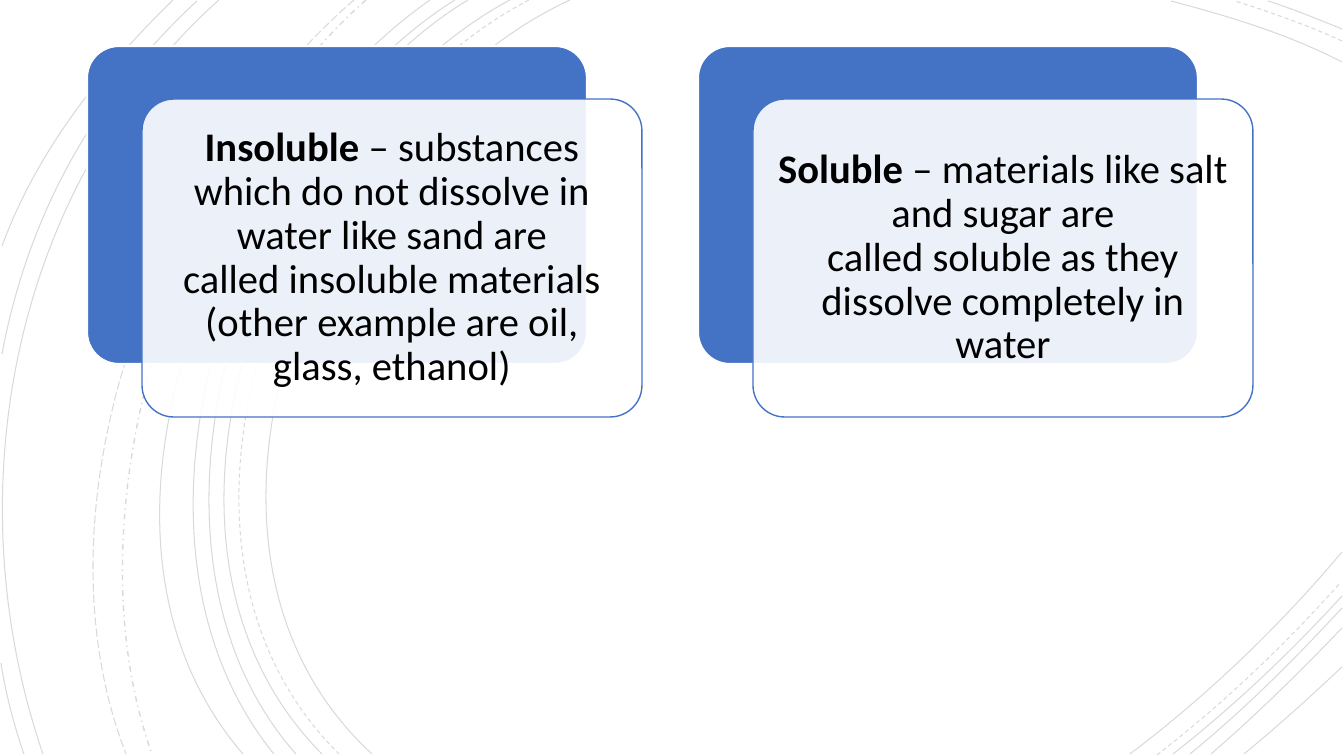
from lxml import etree
from pptx import Presentation
from pptx.dml.color import RGBColor
from pptx.enum.dml import MSO_LINE
from pptx.enum.shapes import MSO_SHAPE
from pptx.enum.text import MSO_ANCHOR, PP_ALIGN
from pptx.oxml.ns import qn
from pptx.util import Pt

SOLID, DASH = MSO_LINE.SOLID, MSO_LINE.DASH
DASH_DOT, LONG_DASH = MSO_LINE.DASH_DOT, MSO_LINE.LONG_DASH
ROUNDED = MSO_SHAPE.ROUNDED_RECTANGLE
MIDDLE, CENTER = MSO_ANCHOR.MIDDLE, PP_ALIGN.CENTER

BLACK = RGBColor(0x00, 0x00, 0x00)
WHITE = RGBColor(0xFF, 0xFF, 0xFF)
BLUE = RGBColor(0x44, 0x72, 0xC4)

NBSP = chr(160)

CARDS = [
    ("Insoluble", f" – substances which do not dissolve in water like sand are "
     f"called{NBSP}insoluble materials (other example are oil, glass, ethanol)"),
    ("Soluble ", f"– materials{NBSP}like salt and sugar are "
     f"called{NBSP}soluble{NBSP}as they dissolve completely in water"),
]

ARCS = [
    (SOLID, 0.75, [
        ((570, 0), (318, 116), (144, 544), (372, 754)),
        ((1342, 62), (1288, 34), (1228, 16), (1171, 1)),
        ((1130, 754), (1207, 696), (1279, 627), (1342, 552)),
        ((510, 0), (272, 128), (111, 541), (322, 754)),
        ((1342, 29), (1317, 19), (1293, 9), (1268, 1)),
        ((1173, 754), (1233, 707), (1290, 653), (1342, 596)),
        ((468, 0), (246, 134), (111, 545), (296, 754)),
        ((1190, 754), (1244, 710), (1294, 660), (1342, 608)),
        ((455, 0), (233, 139), (98, 537), (274, 754)),
        ((1211, 754), (1256, 715), (1300, 672), (1342, 628)),
        ((430, 0), (219, 148), (53, 533), (243, 754)),
        ((1244, 754), (1277, 727), (1309, 698), (1342, 667)),
        ((219, 0), (11, 186), (-46, 494), (43, 754)),
        ((197, 1), (93, 97), (28, 216), (2, 354)),
        ((1, 663), (6, 695), (14, 725), (24, 754)),
        ((173, 0), (101, 70), (37, 151), (2, 246)),
    ]),
    (DASH, 0.75, [
        ((529, 0), (287, 126), (124, 541), (339, 754)),
        ((1342, 41), (1307, 25), (1270, 12), (1235, 1)),
        ((1157, 755), (1223, 704), (1285, 645), (1341, 582)),
    ]),
    (DASH_DOT, 1, [((366, 0), (177, 167), (66, 513), (152, 754))]),
    (LONG_DASH, 0.75, [((354, 0), (158, 170), (29, 503), (126, 754))]),
]

SLIDE_W, SLIDE_H = 1344, 756
CARD_X, CARD_Y, CARD_W, CARD_H = 87, 46, 500, 318
CARD_PITCH = 611
FRONT_DX, FRONT_DY = 55, 53
TEXT_INSET = 12


def px(n):
    return round(n * 914400 / 100.8)


def set_alpha(element, percent):
    color = element.find(".//" + qn("a:srgbClr"))
    etree.SubElement(color, qn("a:alpha"), val=str(percent * 1000))


def add_arc(shapes, arc, dash, width):
    start, *rest = [(px(x), px(y)) for x, y in arc]
    builder = shapes.build_freeform(*start)
    builder.add_line_segments(rest, close=False)
    sp = builder.convert_to_shape()
    outline = sp._element.spPr.find(".//" + qn("a:path"))
    curve = etree.SubElement(outline, qn("a:cubicBezTo"))
    for segment in outline.findall(qn("a:lnTo")):
        curve.append(segment[0])
        outline.remove(segment)
    sp.shadow.inherit = False
    sp.fill.background()
    sp.line.color.rgb = BLACK
    sp.line.width = Pt(width)
    sp.line.dash_style = dash
    set_alpha(sp._element.spPr.find(qn("a:ln")), 15)


def add_panel(shapes, x, y, fill, line, width):
    sp = shapes.add_shape(ROUNDED, px(x), px(y), px(CARD_W), px(CARD_H))
    sp.adjustments[0] = 0.1
    sp.shadow.inherit = False
    sp.fill.solid()
    sp.fill.fore_color.rgb = fill
    sp.line.color.rgb = line
    sp.line.width = Pt(width)
    return sp


def add_card(shapes, x, term, meaning):
    add_panel(shapes, x, CARD_Y, BLUE, WHITE, 1.5)
    front = add_panel(shapes, x + FRONT_DX, CARD_Y + FRONT_DY, WHITE, BLUE, 1)
    set_alpha(front._element.spPr.find(qn("a:solidFill")), 90)
    tf = front.text_frame
    tf.word_wrap = True
    tf.vertical_anchor = MIDDLE
    tf.margin_left = tf.margin_right = px(TEXT_INSET)
    tf.margin_top = tf.margin_bottom = px(TEXT_INSET)
    p = tf.paragraphs[0]
    p.alignment = CENTER
    p.line_spacing = 0.9
    p.font.name = "Calibri"
    p.font.size = Pt(29)
    p.font.color.rgb = BLACK
    for text, bold in ((term, True), (meaning, False)):
        r = p.add_run()
        r.text = text
        r.font.bold = bold


def main():
    prs = Presentation()
    prs.slide_width, prs.slide_height = px(SLIDE_W), px(SLIDE_H)
    s = prs.slides.add_slide(prs.slide_layouts[6])
    for dash, width, arcs in ARCS:
        for arc in arcs:
            add_arc(s.shapes, arc, dash, width)
    for i, (term, meaning) in enumerate(CARDS):
        add_card(s.shapes, CARD_X + i * CARD_PITCH, term, meaning)
    prs.save("out.pptx")


if __name__ == "__main__":
    main()
